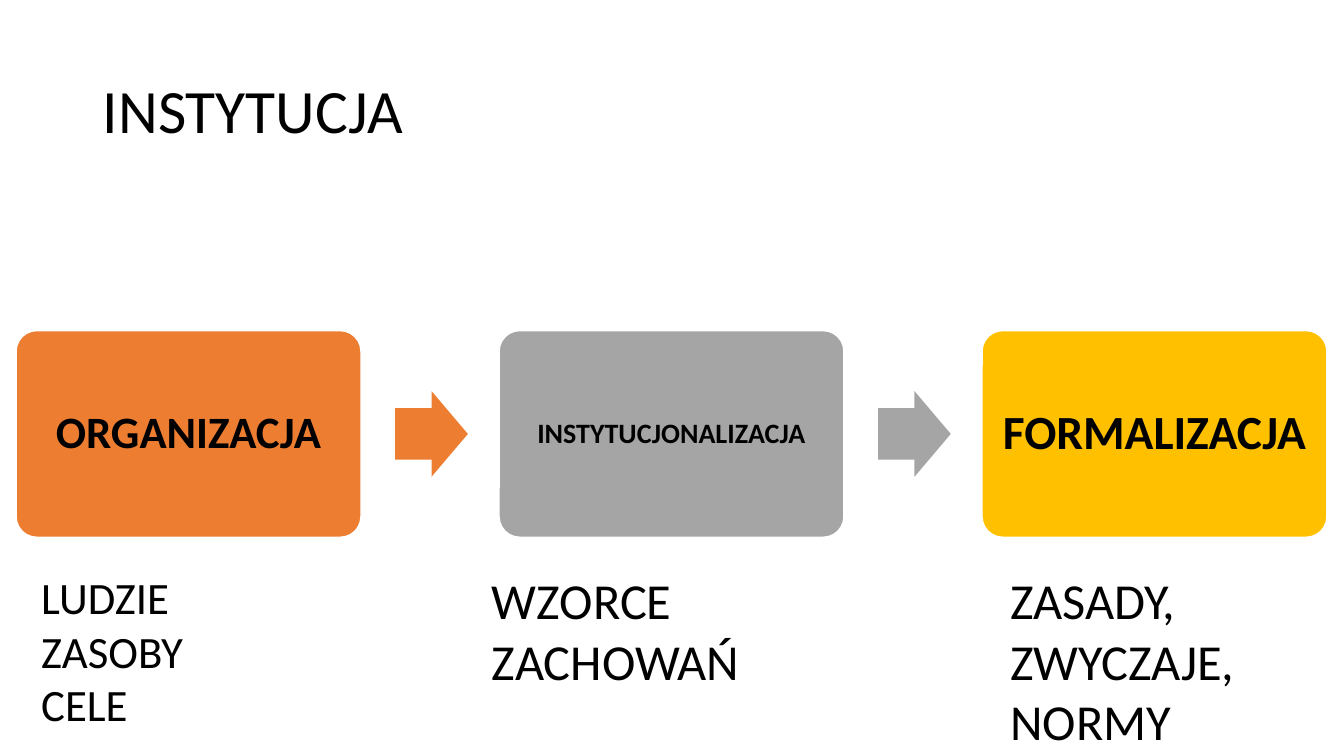
"""Build the INSTYTUCJA slide: a three-step process with captions below."""
import pptx
import pptx.util
import pptx.dml.color
import pptx.enum.shapes
import pptx.enum.text

PX = 9144
THEME = {
    "font": "Calibri",
    "text": "000000",
    "outline": "FFFFFF",
    "steps": ["ED7D31", "A5A5A5", "FFC000"],
    "title_size": 44,
    "step_sizes": [32, 20, 34],
    "caption_sizes": [32, 36, 36],
}
STEP_LEFT, STEP_TOP, STEP_W, STEP_H, PITCH = 16, 328, 342, 205, 479
ARROW_OFFSET, ARROW_W, ARROW_H = 376, 72, 85

steps = [
    ("ORGANIZACJA", 13, ["LUDZIE", "ZASOBY", "CELE"], 31, 172),
    ("INSTYTUCJONALIZACJA", 8, ["WZORCE ZACHOWAŃ"], 478, 131),
    ("FORMALIZACJA", 14, ["ZASADY, ZWYCZAJE, NORMY"], 992, 192),
]


def write(tf, lines, size, align, bold=False):
    tf.word_wrap = True
    for i, line in enumerate(lines):
        p = tf.paragraphs[0] if i == 0 else tf.add_paragraph()
        p.text = line
        p.alignment = align
        p.font.name = THEME["font"]
        p.font.size = pptx.util.Pt(size)
        p.font.bold = bold
        p.font.color.rgb = pptx.dml.color.RGBColor.from_string(THEME["text"])


def add_block(kind, box, color, adjustments):
    sp = s.shapes.add_shape(kind, *[v * PX for v in box])
    sp.shadow.inherit = False
    sp.fill.solid()
    sp.fill.fore_color.rgb = pptx.dml.color.RGBColor.from_string(color)
    for i, value in enumerate(adjustments):
        sp.adjustments[i] = value
    return sp


prs = pptx.Presentation()
prs.slide_width, prs.slide_height = 1333 * PX, 750 * PX
s = prs.slides.add_slide(prs.slide_layouts[5])
left, center = pptx.enum.text.PP_ALIGN.LEFT, pptx.enum.text.PP_ALIGN.CENTER
middle = pptx.enum.text.MSO_ANCHOR.MIDDLE
shape_types = pptx.enum.shapes.MSO_SHAPE

title = s.shapes.title
title.left, title.top, title.width, title.height = [v * PX for v in (92, 40, 1150, 145)]
tf = title.text_frame
tf.auto_size = pptx.enum.text.MSO_AUTO_SIZE.NONE
tf.vertical_anchor = middle
write(tf, ["INSTYTUCJA"], THEME["title_size"], left)
tf.paragraphs[0].line_spacing = 0.9

for i, (name, inset, caption, caption_left, caption_h) in enumerate(steps):
    x = STEP_LEFT + i * PITCH
    color = THEME["steps"][i]

    sp = add_block(shape_types.ROUNDED_RECTANGLE, (x, STEP_TOP, STEP_W, STEP_H), color, [0.1])
    sp.line.color.rgb = pptx.dml.color.RGBColor.from_string(THEME["outline"])
    sp.line.width = pptx.util.Pt(1)
    tf = sp.text_frame
    tf.margin_left = tf.margin_right = tf.margin_top = tf.margin_bottom = inset * PX
    tf.vertical_anchor = middle
    write(tf, [name], THEME["step_sizes"][i], center, bold=True)
    tf.paragraphs[0].line_spacing = 0.9

    if i < len(steps) - 1:
        arrow_top = STEP_TOP + (STEP_H - ARROW_H) // 2
        arrow = add_block(shape_types.RIGHT_ARROW,
                          (x + ARROW_OFFSET, arrow_top, ARROW_W, ARROW_H), color, [0.6, 0.5])
        arrow.line.fill.background()

    tb = s.shapes.add_textbox(*[v * PX for v in (caption_left, 560, 305, caption_h)])
    write(tb.text_frame, caption, THEME["caption_sizes"][i], left)
    tb.text_frame.auto_size = pptx.enum.text.MSO_AUTO_SIZE.SHAPE_TO_FIT_TEXT

prs.save("out.pptx")
